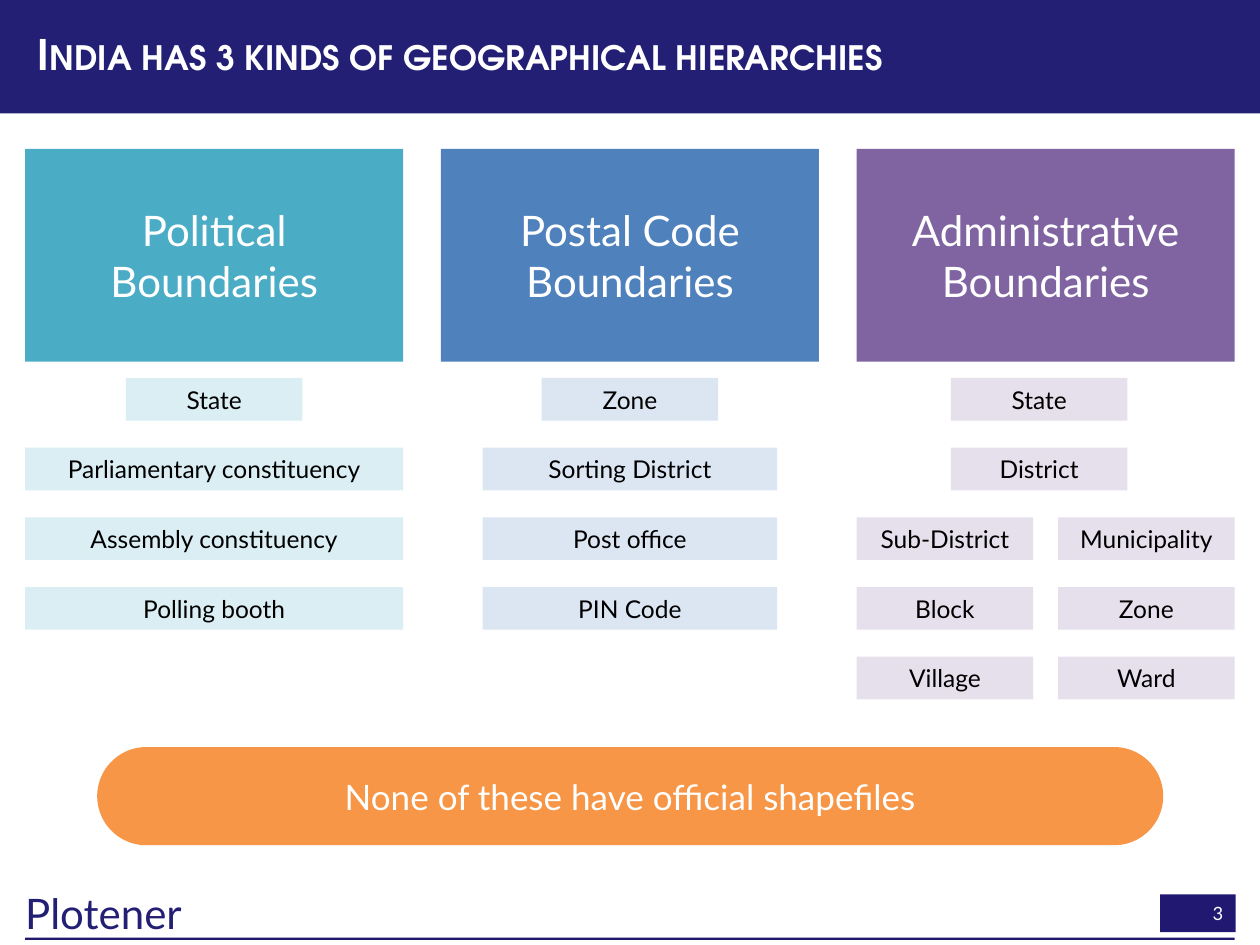
from pptx import Presentation
from pptx import util as u
from pptx.dml.color import RGBColor
from pptx.enum import shapes, text

NAVY, WHITE, BLACK = "231F74", "FFFFFF", "000000"
RECT, PILL = shapes.MSO_SHAPE.RECTANGLE, shapes.MSO_SHAPE.ROUNDED_RECTANGLE
LEFT, MID, RIGHT = text.PP_ALIGN.LEFT, text.PP_ALIGN.CENTER, text.PP_ALIGN.RIGHT

# Lengths in cm
WIDE, TALL, EDGE = 25.4, 19.05, 0.51
COL, STEP = 7.62, 8.38
SMALL, MEDIUM, FULL = 3.56, 5.94, COL

# Heading, head fill, cell fill, rows of (cell width, labels, shift)
COLUMNS = [
    ("Political Boundaries", "4BACC6", "DBEEF4", [
        (SMALL, ["State"], 0),
        (FULL, ["Parliamentary constituency"], 0),
        (FULL, ["Assembly constituency"], 0),
        (FULL, ["Polling booth"], 0)]),
    ("Postal Code Boundaries", "4F81BD", "DCE6F2", [
        (SMALL, ["Zone"], 0),
        (MEDIUM, ["Sorting District"], 0),
        (MEDIUM, ["Post office"], 0),
        (MEDIUM, ["PIN Code"], 0)]),
    ("Administrative Boundaries", "8064A2", "E6E0EC", [
        (SMALL, ["State"], -0.13),
        (SMALL, ["District"], -0.13),
        (SMALL, ["Sub-District", "Municipality"], 0),
        (SMALL, ["Block", "Zone"], 0),
        (SMALL, ["Village", "Ward"], 0)]),
]


def color(code):
    return RGBColor.from_string(code)


def write(shape, words, size=14, ink=BLACK, align=MID, font="Lato",
          bold=False, caps=False, inset=None, space=None):
    frame = shape.text_frame
    frame.word_wrap = True
    frame.vertical_anchor = text.MSO_ANCHOR.MIDDLE
    if inset is not None:
        frame.margin_left = frame.margin_right = u.Cm(inset)
        frame.margin_top = frame.margin_bottom = u.Cm(inset)
    para = frame.paragraphs[0]
    para.alignment = align
    if space:
        para.line_spacing = space
    run = para.add_run()
    run.text = words
    run.font.name, run.font.size, run.font.bold = font, u.Pt(size), bold
    run.font.color.rgb = color(ink)
    if caps:
        run.font._element.set("cap", "small")


def block(slide, box, fill, kind=RECT):
    shape = slide.shapes.add_shape(kind, *map(u.Cm, box))
    shape.shadow.inherit = False
    shape.fill.solid()
    shape.fill.fore_color.rgb = color(fill)
    shape.line.fill.background()
    return shape


def label(slide, box, words, **style):
    write(slide.shapes.add_textbox(*map(u.Cm, box)), words, **style)


def banner(slide, x, y, w, h):
    block(slide, (x, y, w, h), NAVY)
    label(slide, (x + EDGE, y + 0.25, w - 2 * EDGE, h - 0.51),
          "India has 3 kinds of geographical hierarchies", size=24, ink=WHITE,
          align=LEFT, font="TeX Gyre Adventor", bold=True, caps=True, space=0.9)


def column(slide, x, y, w, head, fill, tint, rows):
    write(block(slide, (x, y, w, 4.29), fill), head, size=24, ink=WHITE)
    for i, (cell, names, shift) in enumerate(rows):
        top = y + 4.62 + 1.405 * i
        # One cell is centred; several spread from edge to edge
        for j, name in enumerate(names):
            part = j / (len(names) - 1) if len(names) > 1 else 0.5
            left = x + (w - cell) * part + shift
            write(block(slide, (left, top, cell, 0.86), tint), name)


def callout(slide, x, y, w, h):
    pill = block(slide, (x, y, w, h), "F79646", PILL)
    pill.adjustments[0] = 0.5
    write(pill, "None of these have official shapefiles", size=20, ink=WHITE)


def footer(slide, x, y, w):
    label(slide, (x, y, 4.5, 1.02), "Plotener", size=24, ink=NAVY,
          align=LEFT, inset=0)
    page = block(slide, (x + w - 1.5, y + 0.15, 1.52, 0.76), "211971")
    write(page, "3", size=10.5, ink=WHITE, align=RIGHT)
    block(slide, (x, y + 1.02, w, 0.05), "20186F")


def main():
    deck = Presentation()
    deck.slide_width, deck.slide_height = u.Cm(WIDE), u.Cm(TALL)
    slide = deck.slides.add_slide(deck.slide_layouts[6])
    banner(slide, 0, 0, WIDE, 2.29)
    for i, spec_row in enumerate(COLUMNS):
        column(slide, EDGE + STEP * i, 3, COL, *spec_row)
    callout(slide, 1.96, 15.06, 21.49, 1.98)
    footer(slide, EDGE, 17.88, WIDE - 2 * EDGE)
    deck.save("out.pptx")


if __name__ == "__main__":
    main()
